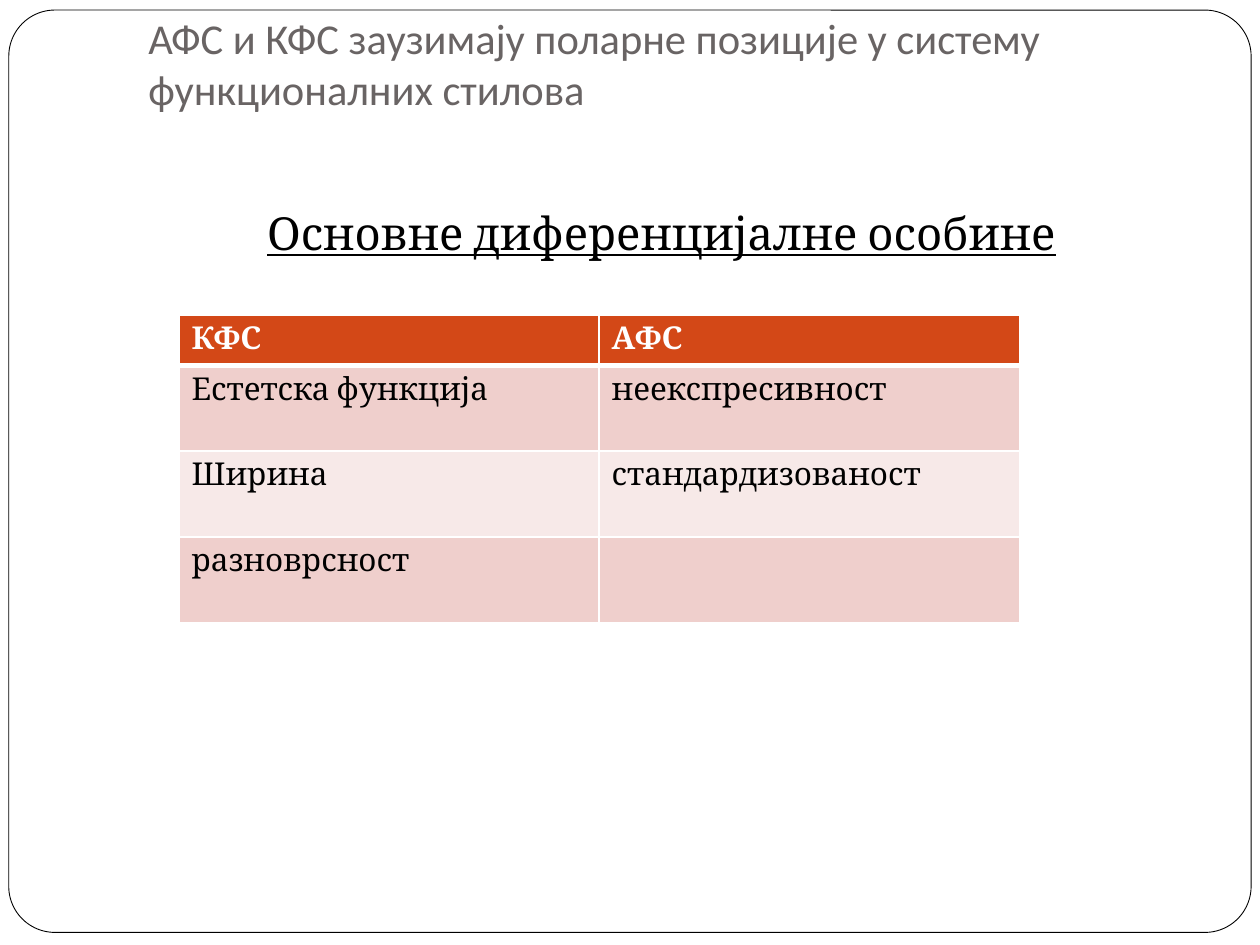
from lxml import etree
from pptx import Presentation
from pptx.dml.color import RGBColor
from pptx.enum.shapes import MSO_SHAPE
from pptx.enum.text import PP_ALIGN
from pptx.oxml.ns import qn
from pptx.util import Inches, Pt

ROUNDED = MSO_SHAPE.ROUNDED_RECTANGLE
LEFT, CENTER = PP_ALIGN.LEFT, PP_ALIGN.CENTER

COLORS = {
    "white": "FFFFFF",
    "black": "000000",
    "title": "696464",
    "header": "D34817",
    "band_dark": "EFCFCC",
    "band_light": "F7E9E8",
}
ROWS = [
    ("КФС", "АФС"),
    ("Естетска функција", "неекспресивност"),
    ("Ширина", "стандардизованост"),
    ("разноврсност", ""),
]


def rgb(name):
    return RGBColor.from_string(COLORS[name])


def style_text(p, font, size, color, bold=False, underline=False):
    for r in p.runs:
        r.font.name = font
        r.font.size = Pt(size)
        r.font.color.rgb = rgb(color)
        r.font.bold = bold
        r.font.underline = underline


def add_frame(slide, x, y, w, h):
    sp = slide.shapes.add_shape(ROUNDED, Inches(x), Inches(y), Inches(w), Inches(h))
    sp.adjustments[0] = 0.05
    sp.shadow.inherit = False
    sp.fill.solid()
    sp.fill.fore_color.rgb = rgb("white")
    sp.line.color.rgb = rgb("black")
    sp.line.width = Pt(0.5)


def add_text(slide, x, y, w, h, text, font, size, color, align=LEFT, underline=False):
    sp = slide.shapes.add_textbox(Inches(x), Inches(y), Inches(w), Inches(h))
    tf = sp.text_frame
    tf.word_wrap = True
    tf.text = text
    p = tf.paragraphs[0]
    p.alignment = align
    style_text(p, font, size, color, underline=underline)


def set_borders(cell, bottom):
    tc_pr = cell._tc.get_or_add_tcPr()
    for i, (side, width) in enumerate(
        [("lnL", 1), ("lnR", 1), ("lnT", 1), ("lnB", bottom)]
    ):
        ln = etree.Element(qn(f"a:{side}"), w=str(Pt(width)))
        fill = etree.SubElement(ln, qn("a:solidFill"))
        etree.SubElement(fill, qn("a:srgbClr"), val=COLORS["white"])
        tc_pr.insert(i, ln)


def add_feature_table(slide, x, y, w, header_h, row_h):
    h = header_h + row_h * (len(ROWS) - 1)
    cols = len(ROWS[0])
    table = slide.shapes.add_table(
        len(ROWS), cols, Inches(x), Inches(y), Inches(w), Inches(h)
    ).table
    for col in table.columns:
        col.width = Inches(w / cols)
    for i, texts in enumerate(ROWS):
        header = i == 0
        table.rows[i].height = Inches(header_h if header else row_h)
        band = "header" if header else "band_dark" if i % 2 else "band_light"
        for j, text in enumerate(texts):
            cell = table.cell(i, j)
            cell.fill.solid()
            cell.fill.fore_color.rgb = rgb(band)
            set_borders(cell, 3 if header else 1)
            cell.text = text
            style_text(
                cell.text_frame.paragraphs[0], "Cambria", 18,
                "white" if header else "black", bold=header,
            )


def main():
    prs = Presentation()
    prs.slide_width, prs.slide_height = Inches(10), Inches(7.5)
    slide = prs.slides.add_slide(prs.slide_layouts[6])
    add_frame(slide, 0.07, 0.08, 9.86, 7.32)
    add_text(slide, 1.08, 0.05, 8.5, 0.9,
             "АФС и КФС заузимају поларне позиције у систему функционалних стилова",
             "Calibri", 24.3, "title")
    add_text(slide, 1, 1.58, 8.5, 0.6, "Основне диференцијалне особине",
             "Cambria", 26, "black", CENTER, underline=True)
    add_feature_table(slide, 1.42, 2.5, 6.67, 0.4, 0.68)
    prs.save("out.pptx")


if __name__ == "__main__":
    main()
